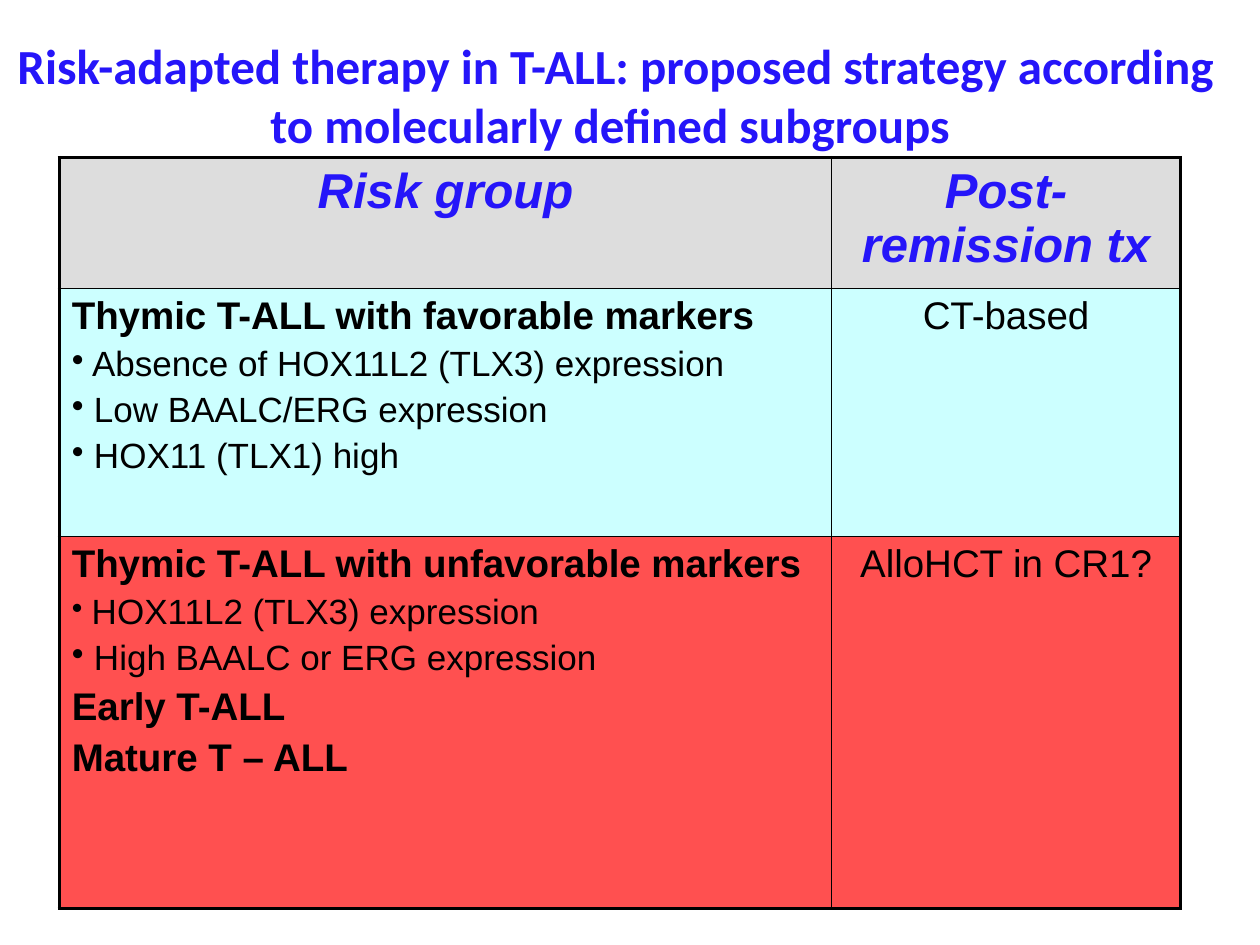
import pptx
import pptx.dml.color
import pptx.enum.text
import pptx.oxml.ns
import pptx.util
from lxml import etree

Inches = pptx.util.Inches
Pt = pptx.util.Pt
CENTER = pptx.enum.text.PP_ALIGN.CENTER
LEFT = pptx.enum.text.PP_ALIGN.LEFT

BLUE, BLACK = "2515F9", "000000"
GRAY, CYAN, RED = "DDDDDD", "CCFFFF", "FF5050"


def color(value):
    return pptx.dml.color.RGBColor.from_string(value)


def add_element(parent, tag, **attributes):
    return etree.SubElement(parent, pptx.oxml.ns.qn(tag), attributes)


def heading(text):
    return {"runs": [(text, 22)], "bold": True}


def bullet(*runs):
    return {"runs": runs, "bullet": True}


def centered(text, **options):
    return {"runs": [(text, 22)], "align": CENTER, **options}


def column_title(text):
    return {"runs": [(text, 28)], "align": CENTER, "bold": True, "italic": True, "ink": BLUE}


class SlideBuilder:
    title_font = "Calibri"
    table_font = "Arial"
    outer_line = Pt(2.25)
    inner_line = Pt(1)

    def __init__(self, presentation):
        self.slide = presentation.slides.add_slide(presentation.slide_layouts[5])

    def add_run(self, paragraph, text, size, font, ink, bold=False, italic=False):
        run = paragraph.add_run()
        run.text = text
        run.font.size = Pt(size)
        run.font.name = font
        run.font.bold = bold
        run.font.italic = italic
        run.font.color.rgb = color(ink)

    def add_title(self, text, left, top, width, height):
        title = self.slide.shapes.title
        title.left, title.top, title.width, title.height = left, top, width, height
        frame = title.text_frame
        frame.word_wrap = True
        frame.auto_size = pptx.enum.text.MSO_AUTO_SIZE.NONE
        frame.vertical_anchor = pptx.enum.text.MSO_ANCHOR.MIDDLE
        paragraph = frame.paragraphs[0]
        paragraph.alignment = CENTER
        self.add_run(paragraph, text, 28, self.title_font, BLUE, bold=True)

    def add_table(self, left, top, widths, heights, rows, fills):
        frame = self.slide.shapes.add_table(
            len(heights), len(widths), left, top, sum(widths), sum(heights))
        table = frame.table
        table.first_row = table.horz_banding = False
        for column, width in zip(table.columns, widths):
            column.width = width
        for row, height in zip(table.rows, heights):
            row.height = height
        for row_index, (contents, fill) in enumerate(zip(rows, fills)):
            for column_index, paragraphs in enumerate(contents):
                cell = table.cell(row_index, column_index)
                outer_edges = {
                    "a:lnL": column_index == 0,
                    "a:lnR": column_index == len(widths) - 1,
                    "a:lnT": row_index == 0,
                    "a:lnB": row_index == len(heights) - 1,
                }
                self.format_cell(cell, outer_edges, fill)
                self.fill_text(cell.text_frame, paragraphs)

    def format_cell(self, cell, outer_edges, fill):
        properties = cell._tc.get_or_add_tcPr()
        for tag, is_outer in outer_edges.items():
            width = self.outer_line if is_outer else self.inner_line
            line = add_element(properties, tag, w=str(int(width)))
            add_element(add_element(line, "a:solidFill"), "a:srgbClr", val=BLACK)
        cell.fill.solid()
        cell.fill.fore_color.rgb = color(fill)

    def fill_text(self, frame, contents):
        for index, content in enumerate(contents):
            paragraph = frame.add_paragraph() if index else frame.paragraphs[0]
            paragraph.alignment = content.get("align", LEFT)
            properties = paragraph._p.get_or_add_pPr()
            add_element(add_element(properties, "a:spcBef"), "a:spcPct", val="20000")
            if content.get("bullet"):
                add_element(properties, "a:buChar", char="•")
            for text, size in content["runs"]:
                self.add_run(paragraph, text, size, self.table_font,
                             content.get("ink", BLACK),
                             content.get("bold", False), content.get("italic", False))


def main():
    presentation = pptx.Presentation()
    presentation.slide_width = Inches(10)
    presentation.slide_height = Inches(7.5)
    builder = SlideBuilder(presentation)

    favorable = [
        heading("Thymic T-ALL with favorable markers"),
        bullet((" Absence of HOX11L2 (TLX3) expression", 20)),
        bullet((" Low BAALC/ERG expression", 20)),
        bullet((" HOX11 (TLX1) high", 20)),
    ]
    unfavorable = [
        heading("Thymic T-ALL with unfavorable markers"),
        bullet((" ", 18), ("HOX11L2 (TLX3) expression", 20)),
        bullet((" High BAALC or ERG expression", 20)),
        heading("Early T-ALL"),
        heading("Mature T – ALL"),
    ]
    builder.add_table(
        Inches(0.47), Inches(1.25),
        widths=[Inches(6.13), Inches(2.77)],
        heights=[Inches(1.04), Inches(1.97), Inches(2.95)],
        rows=[
            [[column_title("Risk group")], [column_title("Post-remission tx")]],
            [favorable, [centered("CT-based")]],
            [unfavorable, [centered("AlloHCT in CR1?")]],
        ],
        fills=[GRAY, CYAN, RED],
    )
    builder.add_title(
        "Risk-adapted therapy in T-ALL: proposed strategy according "
        "to molecularly defined subgroups ",
        Inches(0), Inches(0.36), Inches(9.77), Inches(0.78))
    presentation.save("out.pptx")


if __name__ == "__main__":
    main()
